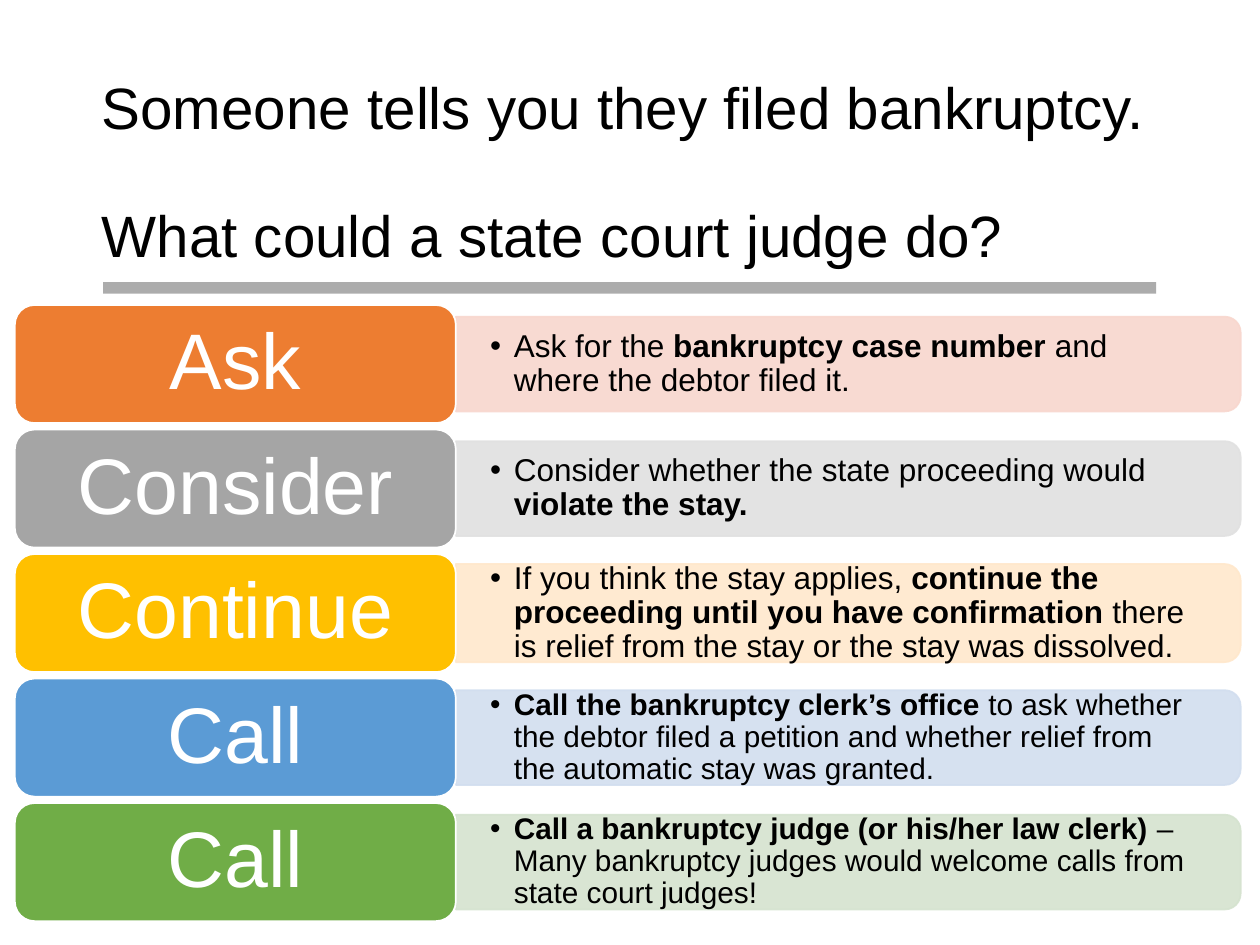
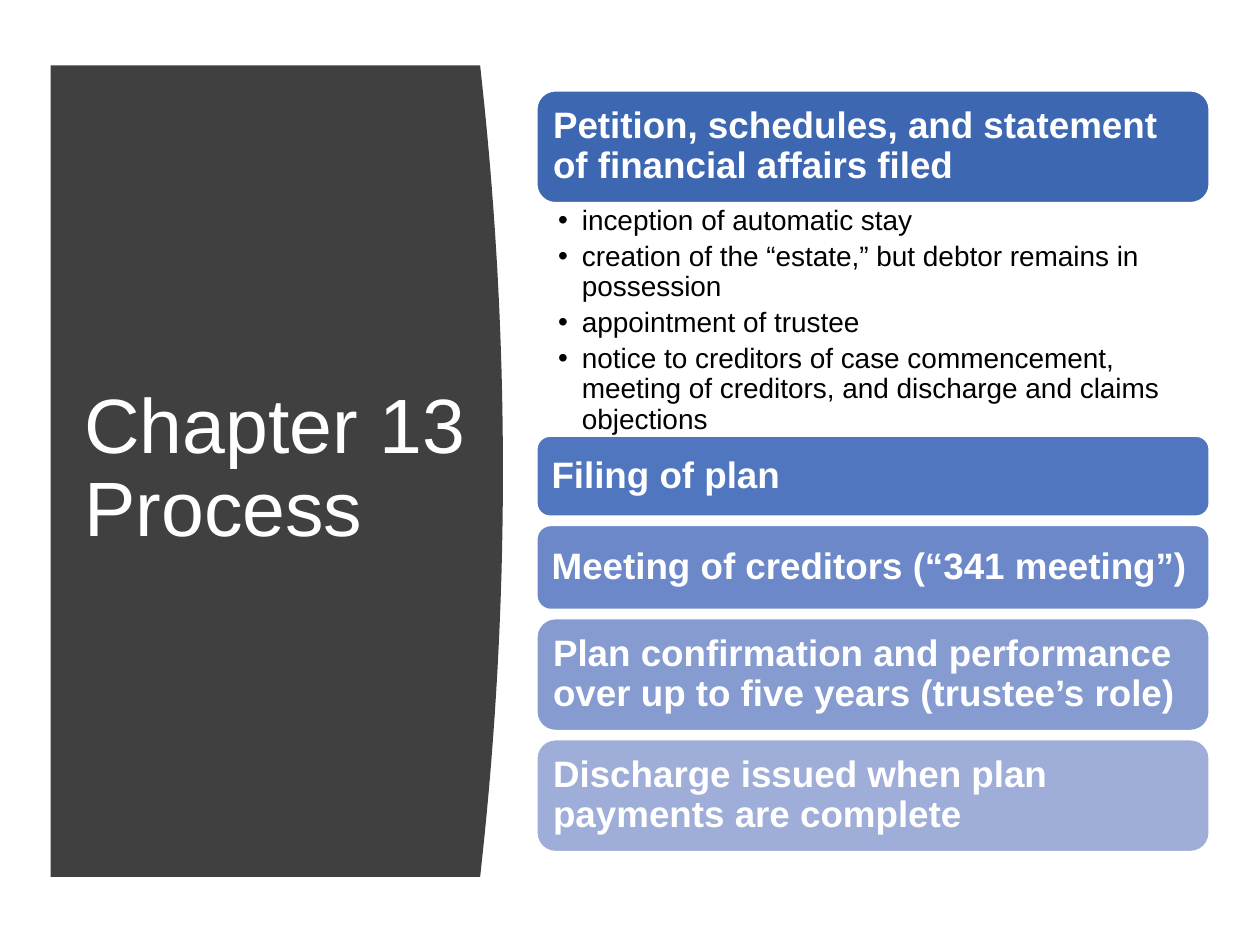
import pptx
import pptx.dml.color
import pptx.enum.shapes
import pptx.enum.text
import pptx.oxml
import pptx.oxml.ns
import pptx.util
from dataclasses import dataclass

Cm = pptx.util.Cm
Pt = pptx.util.Pt
SHAPE = pptx.enum.shapes.MSO_SHAPE
ALIGN = pptx.enum.text.PP_ALIGN
ANCHOR = pptx.enum.text.MSO_ANCHOR
qn = pptx.oxml.ns.qn


@dataclass(frozen=True)
class Theme:
    font: str = "Arial"
    ink: str = "000000"
    paper: str = "FFFFFF"
    rule: str = "808080"
    panel: str = "404040"
    question_size: float = 33.3
    panel_size: float = 44
    action_size: float = 45
    step_size: float = 21
    detail_size: float = 16


def rgb(value):
    return pptx.dml.color.RGBColor.from_string(value)


def set_all(obj, values):
    for name, value in values.items():
        setattr(obj, name, value)


class Deck:
    """Holds the theme and the current slide; one method per kind of element."""

    def __init__(self, theme):
        self.theme = theme
        self.prs = pptx.Presentation()
        set_all(self.prs, {"slide_width": Cm(25.4), "slide_height": Cm(19.05)})
        self.s = None

    def new_slide(self):
        self.s = self.prs.slides.add_slide(self.prs.slide_layouts[5])

    def put_text(self, sp, texts, size, color, insets=(0.25, 0.13, 0.25, 0.13),
                 bold=False, align=ALIGN.LEFT, anchor=ANCHOR.MIDDLE,
                 bullet=False, before=0, after=0):
        """Fill a shape with paragraphs; **marks** switch bold on and off."""
        tf = sp.text_frame
        left, top, right, bottom = (Cm(v) for v in insets)
        set_all(tf, {
            "word_wrap": True, "vertical_anchor": anchor,
            "auto_size": pptx.enum.text.MSO_AUTO_SIZE.NONE,
            "margin_left": left, "margin_top": top,
            "margin_right": right, "margin_bottom": bottom,
        })
        for i, text in enumerate(texts):
            p = tf.add_paragraph() if i else tf.paragraphs[0]
            set_all(p, {"alignment": align, "line_spacing": 0.9,
                        "space_before": Pt(before if i else 0),
                        "space_after": Pt(after)})
            if bullet:
                self.add_bullet(p)
            for j, part in enumerate(text.split("**")):
                if part:
                    r = p.add_run()
                    r.text = part
                    set_all(r.font, {"name": self.theme.font, "size": Pt(size),
                                     "bold": bold or j % 2 == 1})
                    r.font.color.rgb = rgb(color)

    def add_bullet(self, p):
        pPr = p._p.get_or_add_pPr()
        pPr.set("marL", str(Cm(0.48)))
        pPr.set("indent", str(-Cm(0.48)))
        for tag, key, value in (("a:buFont", "typeface", self.theme.font),
                                ("a:buChar", "char", "•")):
            pPr.append(pptx.oxml.parse_xml(
                f'<{tag} {pptx.oxml.ns.nsdecls("a")} {key}="{value}"/>'))

    def paint(self, sp, fill, line=None, opacity=100):
        sp.shadow.inherit = False
        sp.fill.solid()
        sp.fill.fore_color.rgb = rgb(fill)
        if line:
            sp.line.color.rgb = rgb(line)
            sp.line.width = Pt(1)
        else:
            sp.line.fill.background()
        if opacity < 100:
            for clr in sp.element.spPr.iter(qn("a:srgbClr")):
                clr.append(pptx.oxml.parse_xml(
                    f'<a:alpha {pptx.oxml.ns.nsdecls("a")} val="{opacity * 1000}"/>'))

    def title(self, box, texts, size, color, **style):
        sp = self.s.shapes.title
        set_all(sp, dict(zip(("left", "top", "width", "height"), map(Cm, box))))
        self.put_text(sp, texts, size, color, **style)

    def shape(self, kind, box, fill, line=None, opacity=100):
        sp = self.s.shapes.add_shape(kind, *map(Cm, box))
        self.paint(sp, fill, line, opacity)
        return sp

    def label(self, box, fill, text, size, **style):
        sp = self.shape(SHAPE.ROUNDED_RECTANGLE, box, fill, self.theme.paper)
        self.put_text(sp, [text], size, self.theme.paper, **style)

    def band(self, left, middle, length, height, fill):
        """A bar rounded at its right end: a top-rounded shape turned by 90°."""
        box = (left + (length - height) / 2, middle - length / 2, height, length)
        sp = self.shape(SHAPE.ROUND_2_SAME_RECTANGLE, box, fill, fill, 90)
        sp.rotation = 90

    def bullets(self, box, texts, size, **style):
        sp = self.s.shapes.add_textbox(*map(Cm, box))
        self.put_text(sp, texts, size, self.theme.ink, bullet=True, **style)

    def curved_panel(self, left, top, right, bottom, bulge, fill, steps=40):
        """A panel whose right side swells out as a parabola, behind the title."""
        curve = []
        for i in range(steps + 1):
            u = 2 * i / steps - 1
            curve.append((Cm(right + bulge * (1 - u * u)),
                          Cm(top + (bottom - top) * i / steps)))
        fb = self.s.shapes.build_freeform(Cm(left), Cm(top))
        fb.add_line_segments(curve + [(Cm(left), Cm(bottom))], close=True)
        sp = fb.convert_to_shape()
        self.paint(sp, fill)
        self.s.shapes.title.element.addprevious(sp.element)


# label, label colour, band colour, band height, text size, text
ACTIONS = [
    ("Ask", "ED7D31", "F8D7CE", 1.91, 18,
     "Ask for the **bankruptcy case number **and where the debtor filed it."),
    ("Consider", "A5A5A5", "E1E1E1", 1.91, 18,
     "Consider whether the state proceeding would **violate the stay.**"),
    ("Continue", "FFC000", "FFE8CC", 1.98, 18,
     "If you think the stay applies, **continue the proceeding until you have "
     "confirmation** there is relief from the stay or the stay was dissolved."),
    ("Call", "5B9BD5", "D2DEEF", 1.91, 17,
     "**Call the bankruptcy clerk’s office **to ask whether the debtor filed a "
     "petition and whether relief from the automatic stay was granted."),
    ("Call", "70AD47", "D5E3CF", 1.91, 17,
     "**Call a bankruptcy judge (or his/her law clerk) **– Many bankruptcy "
     "judges would welcome calls from state court judges!"),
]

# text, colour, height, height of the details below
STEPS = [
    ("Petition, schedules, and statement of financial affairs filed",
     "3E67B2", 2.26, 4.7),
    ("Filing of plan", "5176C0", 1.62, 0),
    ("Meeting of creditors (“341 meeting”)", "6C88C8", 1.7, 0),
    ("Plan confirmation and performance over up to five years (trustee’s role)",
     "869BD0", 2.26, 0),
    ("Discharge issued when plan payments are complete", "9FAED8", 2.26, 0),
]

PETITION_DETAILS = [
    "inception of automatic stay",
    "creation of the “estate,” but debtor remains in possession",
    "appointment of trustee",
    "notice to creditors of case commencement, meeting of creditors, "
    "and discharge and claims objections",
]


def judge_options(deck):
    t = deck.theme
    deck.new_slide()
    deck.title((1.8, 1.68, 21.77, 3.68),
               ["Someone tells you they filed bankruptcy.",
                "What could a state court judge do?"],
               t.question_size, t.ink, before=37.5)
    deck.shape(SHAPE.RECTANGLE, (2.08, 5.69, 21.23, 0.23), t.rule, opacity=65)

    # One row per action: pale band with its text, then the coloured label
    left, top, width, height, pitch = 0.3, 6.15, 8.89, 2.38, 2.51
    band_left = left + width
    for i, (name, color, pale, band_height, size, text) in enumerate(ACTIONS):
        y = top + i * pitch
        middle = y + height / 2
        text_height = band_height - 0.18
        deck.band(band_left, middle, 15.82, band_height, pale)
        deck.bullets((band_left, middle - text_height / 2, 15.72, text_height),
                     [text], size, insets=(0.69, 0.36, 0.69, 0.36))
        deck.label((left, y, width, height), color, name, t.action_size,
                   align=ALIGN.CENTER, insets=(0.48, 0.24, 0.48, 0.24))


def chapter_13(deck):
    t = deck.theme
    deck.new_slide()
    deck.title((1.45, 2.82, 9.12, 13.31), ["Chapter 13 Process"],
               t.panel_size, t.paper)
    deck.curved_panel(1.02, 1.32, 9.68, 17.68, 0.46, t.panel)

    # Steps stacked downwards; details take the place of the gap
    left, y, width, gap = 10.82, 1.83, 13.56, 0.18
    for text, color, height, details_height in STEPS:
        deck.label((left, y, width, height), color, text, t.step_size,
                   bold=True, insets=(0.22,) * 4)
        y += height
        if details_height:
            deck.bullets((left, y, width, details_height), PETITION_DETAILS,
                         t.detail_size, anchor=ANCHOR.TOP, after=3.2,
                         insets=(0.43, 0.08, 0.41, 0.08))
        y += details_height or gap


def main():
    deck = Deck(Theme())
    judge_options(deck)
    chapter_13(deck)
    deck.prs.save("out.pptx")


if __name__ == "__main__":
    main()
